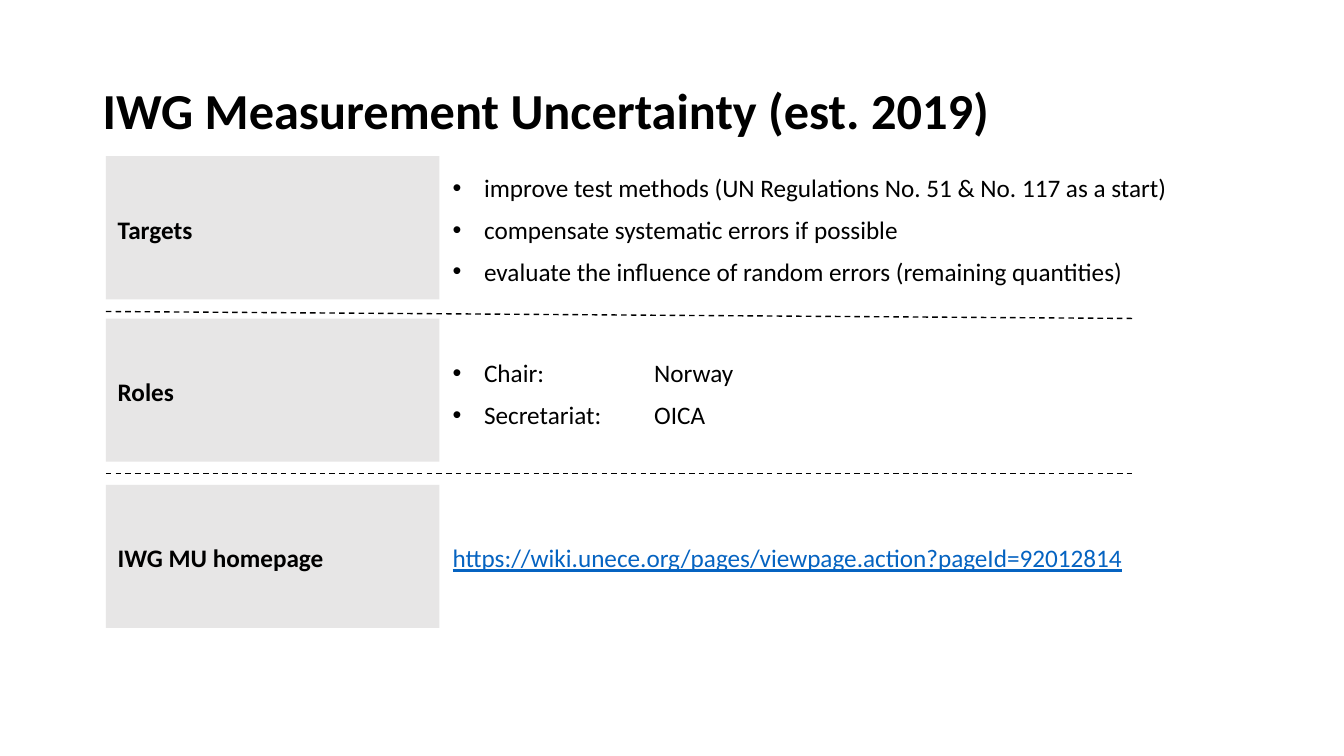
from lxml import etree
from pptx import Presentation
from pptx.dml.color import RGBColor
from pptx.enum.dml import MSO_LINE
from pptx.enum.shapes import MSO_CONNECTOR, MSO_SHAPE
from pptx.enum.text import MSO_ANCHOR, MSO_AUTO_SIZE, PP_ALIGN
from pptx.oxml.ns import qn
from pptx.util import Pt

STRAIGHT = MSO_CONNECTOR.STRAIGHT
RECTANGLE = MSO_SHAPE.RECTANGLE
DASH = MSO_LINE.DASH
MIDDLE = MSO_ANCHOR.MIDDLE
NO_AUTOFIT = MSO_AUTO_SIZE.NONE
LEFT = PP_ALIGN.LEFT

COLORS = {"text": "000000", "label": "E7E6E6", "link": "0563C1"}
FONT = "Calibri"
LABEL_LEFT, LABEL_WIDTH = 75.6, 238.3
BODY_LEFT = 323.3
ROW_HEIGHT = 102.2
RULE_RIGHT = 810.7
INDENT = 22.5
TAB_STOP = 144

# label, label top, body top, body width, body lines, bulleted
ROWS = [
    ("Targets", 111.6, 111.6, 535, [
        "improve test methods (UN Regulations No. 51 & No. 117 as a start)",
        "compensate systematic errors if possible",
        "evaluate the influence of random errors (remaining quantities)",
    ], True),
    ("Roles", 227.5, 229, 488, ["Chair:\tNorway", "Secretariat:\tOICA"], True),
    ("IWG MU homepage", 346.3, 346.3, 506,
     ["https://wiki.unece.org/pages/viewpage.action?pageId=92012814"], False),
]
RULES = [(222.5, 227.5), (338.4, 338.4)]


def rgb(name):
    return RGBColor.from_string(COLORS[name])


def format_runs(p, size, color="text", bold=False, underline=False):
    for r in p.runs:
        r.font.name = FONT
        r.font.size = Pt(size)
        r.font.bold = bold
        r.font.underline = underline
        r.font.color.rgb = rgb(color)


def set_margins(tf, horizontal, vertical):
    tf.margin_left = tf.margin_right = Pt(horizontal)
    tf.margin_top = tf.margin_bottom = Pt(vertical)


def add_bullet(p):
    """Give the paragraph a hanging bullet and a tab stop."""
    ppr = p._p.get_or_add_pPr()
    ppr.set("marL", str(Pt(INDENT)))
    ppr.set("indent", str(-Pt(INDENT)))
    etree.SubElement(ppr, qn("a:buFont"), typeface="Arial")
    etree.SubElement(ppr, qn("a:buChar"), char="•")
    tabs = etree.SubElement(ppr, qn("a:tabLst"))
    etree.SubElement(tabs, qn("a:tab"), pos=str(Pt(TAB_STOP)), algn="l")


def set_title(slide, text):
    title = slide.shapes.title
    title.left, title.top = Pt(66.2), Pt(28.8)
    title.width, title.height = Pt(828), Pt(104.4)
    tf = title.text_frame
    tf.text = text
    tf.auto_size = NO_AUTOFIT
    tf.vertical_anchor = MIDDLE
    p = tf.paragraphs[0]
    p.alignment = LEFT
    p.line_spacing = 0.9
    format_runs(p, 36, bold=True)


def add_label(slide, text, top):
    sp = slide.shapes.add_shape(RECTANGLE, Pt(LABEL_LEFT), Pt(top),
                                Pt(LABEL_WIDTH), Pt(ROW_HEIGHT))
    sp.shadow.inherit = False
    sp.fill.solid()
    sp.fill.fore_color.rgb = rgb("label")
    sp.line.fill.background()
    tf = sp.text_frame
    tf.text = text
    tf.vertical_anchor = MIDDLE
    set_margins(tf, 8.5, 5.7)
    p = tf.paragraphs[0]
    p.alignment = LEFT
    p.line_spacing = 1.1
    format_runs(p, 18, bold=True)


def add_body(slide, top, width, lines, bulleted):
    box = slide.shapes.add_textbox(Pt(BODY_LEFT), Pt(top), Pt(width), Pt(ROW_HEIGHT))
    tf = box.text_frame
    tf.word_wrap = True
    tf.vertical_anchor = MIDDLE
    set_margins(tf, 0, 0)
    for i, line in enumerate(lines):
        p = tf.add_paragraph() if i else tf.paragraphs[0]
        p.text = line
        if bulleted:
            add_bullet(p)
        p.line_spacing = 1.1
        p.space_before = Pt(6 if i else 0)
        format_runs(p, 18, "text" if bulleted else "link", underline=not bulleted)


def add_rule(slide, start_y, end_y):
    rule = slide.shapes.add_connector(STRAIGHT, Pt(LABEL_LEFT), Pt(start_y),
                                      Pt(RULE_RIGHT), Pt(end_y))
    rule.line.color.rgb = rgb("text")
    rule.line.width = Pt(1)
    rule.line.dash_style = DASH
    etree.SubElement(rule._element.spPr, qn("a:effectLst"))


def main():
    prs = Presentation()
    prs.slide_width, prs.slide_height = Pt(960), Pt(540)
    slide = prs.slides.add_slide(prs.slide_layouts[5])
    set_title(slide, "IWG Measurement Uncertainty (est. 2019)")
    for start_y, end_y in RULES:
        add_rule(slide, start_y, end_y)
    for label, label_top, body_top, width, lines, bulleted in ROWS:
        add_body(slide, body_top, width, lines, bulleted)
        add_label(slide, label, label_top)
    prs.save("out.pptx")


if __name__ == "__main__":
    main()
